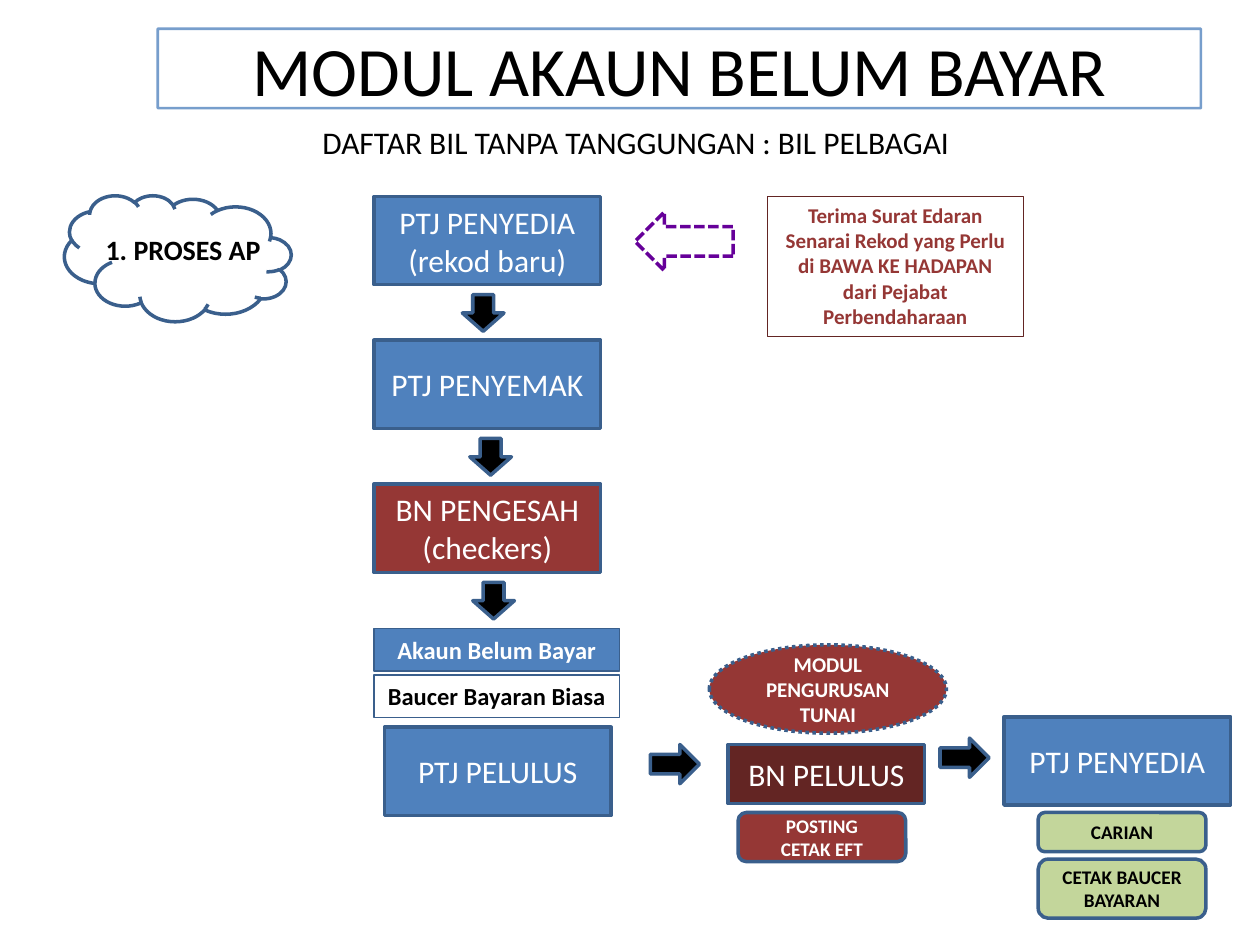
from lxml import etree
from pptx import Presentation
from pptx.dml.color import RGBColor
from pptx.enum import dml, shapes, text
from pptx.oxml import ns
from pptx.util import Cm, Pt

KIND = shapes.MSO_SHAPE
FONT = "Calibri"
BLUE, RED, DARK_RED, GREEN = "4F81BD", "953735", "632523", "C3D69B"
OUTLINE, PURPLE, BLACK, WHITE = "3A5F8C", "660099", "000000", "FFFFFF"
STEP = (4.57, 1.78)  # width and height of a process step
ARROW = (0.99, 0.79)


def color(value):
    return RGBColor.from_string(value)


def write(shape, words, size, ink, bold=False, align=text.PP_ALIGN.CENTER,
          anchor=text.MSO_ANCHOR.MIDDLE, wrap=True):
    frame = shape.text_frame
    frame.text = words
    frame.word_wrap = wrap
    frame.auto_size = text.MSO_AUTO_SIZE.NONE
    frame.vertical_anchor = anchor
    for para in frame.paragraphs:
        para.alignment = align
        para.font.name = FONT
        para.font.size = Pt(size)
        para.font.bold = bold
        para.font.color.rgb = color(ink)


def draw(page, kind, left, top, size, fill=None, line=OUTLINE, weight=2, dash=None):
    shape = page.shapes.add_shape(kind, Cm(left), Cm(top), *map(Cm, size))
    shape.shadow.inherit = False
    if fill:
        shape.fill.solid()
        shape.fill.fore_color.rgb = color(fill)
    else:
        shape.fill.background()
    shape.line.color.rgb = color(line)
    shape.line.width = Pt(weight)
    if dash:
        shape.line.dash_style = dash
    return shape


def step(page, left, top, words, fill=BLUE, size=STEP):
    write(draw(page, KIND.RECTANGLE, left, top, size, fill), words, 18, WHITE)


def tag(page, left, top, height, words, fill, ink):
    shape = draw(page, KIND.ROUNDED_RECTANGLE, left, top, (3.38, height), fill)
    write(shape, words, 11, ink, bold=True)


def plain_text(page, left, top, size, words, points, **style):
    box = page.shapes.add_textbox(Cm(left), Cm(top), *map(Cm, size))
    write(box, words, points, BLACK, align=text.PP_ALIGN.LEFT,
          anchor=text.MSO_ANCHOR.TOP, **style)


def header(page, left, top):
    title = page.shapes.title
    title.left, title.top, title.width, title.height = map(Cm, (left, top, 21.03, 1.6))
    write(title, "MODUL AKAUN BELUM BAYAR", 39.6, BLACK)
    title.line.color.rgb = color(BLUE)
    title.line.width = Pt(1.5)
    # Slightly transparent border
    tint = title.line.fill.fore_color._xFill.find(ns.qn("a:srgbClr"))
    etree.SubElement(tint, ns.qn("a:alpha"), val="76000")
    plain_text(page, left + 3.07, top + 1.78, (13.69, 1.02),
               "DAFTAR BIL TANPA TANGGUNGAN : BIL PELBAGAI", 18)


def process_cloud(page, left, top):
    cloud = draw(page, KIND.CLOUD, left, top, (4.57, 2.54))
    cloud._element.spPr.xfrm.set("flipH", "1")
    plain_text(page, left + 0.58, top + 0.63, (3.68, 0.94), "1. PROSES AP", 16,
               bold=True, wrap=False)


def preparation_column(page, left, top):
    pitch = 2.9
    steps = [("PTJ PENYEDIA\n(rekod baru)", BLUE, 1.83),
             ("PTJ PENYEMAK", BLUE, 1.98),
             ("BN PENGESAH\n(checkers)", RED, 2.04)]
    for row, (words, fill, arrow_left) in enumerate(steps):
        y = top + row * pitch
        step(page, left, y, words, fill)
        arrow = draw(page, KIND.RIGHT_ARROW, left + arrow_left, y + 1.93,
                     (0.74, 0.84), BLACK)
        arrow.rotation = 90


def circular_note(page, left, top):
    arrow = draw(page, KIND.RIGHT_ARROW, left, top + 0.31, (1.98, 1.19),
                 line=PURPLE, dash=dml.MSO_LINE.SQUARE_DOT)
    arrow.rotation = 180
    # SQUARE_DOT is written as sysDot; short dashes need sysDash
    arrow.line._ln.find(ns.qn("a:prstDash")).set("val", "sysDash")
    note = draw(page, KIND.RECTANGLE, left + 2.67, top, (5.16, 2.82),
                line=DARK_RED, weight=0.75)
    write(note, "Terima Surat Edaran Senarai Rekod yang Perlu di BAWA KE HADAPAN "
          "dari Pejabat Perbendaharaan", 12, RED, bold=True,
          anchor=text.MSO_ANCHOR.TOP)


def approval(page, left, top):
    labels = [("Akaun Belum Bayar", BLUE, WHITE), ("Baucer Bayaran Biasa", None, BLACK)]
    for row, (words, fill, ink) in enumerate(labels):
        label = draw(page, KIND.RECTANGLE, left, top + row * 0.94, (4.95, 0.86),
                     fill, weight=0.75)
        write(label, words, 14, ink, bold=True, anchor=text.MSO_ANCHOR.TOP)
    step(page, left + 0.21, top + 1.99, "PTJ PELULUS")
    draw(page, KIND.RIGHT_ARROW, left + 5.57, top + 2.34, ARROW, BLACK)


def cash_module(page, left, top):
    module = draw(page, KIND.OVAL, left, top, (4.78, 1.78), RED,
                  dash=dml.MSO_LINE.ROUND_DOT)
    module.line._ln.find(ns.qn("a:prstDash")).set("val", "sysDot")
    write(module, "MODUL PENGURUSAN TUNAI", 12, WHITE, bold=True)
    step(page, left + 0.38, top + 2.01, "BN PELULUS", DARK_RED, (3.96, 1.19))
    tag(page, left + 0.58, top + 3.38, 0.99, "POSTING\nCETAK EFT", RED, WHITE)
    draw(page, KIND.RIGHT_ARROW, left + 4.65, top + 1.88, ARROW, BLACK)


def voucher_output(page, left, top):
    step(page, left, top, "PTJ PENYEDIA")
    tag(page, left + 0.69, top + 1.93, 0.79, "CARIAN", GREEN, BLACK)
    tag(page, left + 0.69, top + 2.87, 1.19, "CETAK BAUCER BAYARAN", GREEN, BLACK)


def main():
    deck = Presentation()
    deck.slide_width, deck.slide_height = Cm(25.4), Cm(19.05)
    page = deck.slides.add_slide(deck.slide_layouts[5])  # title only
    header(page, 3.18, 0.58)
    process_cloud(page, 1.3, 3.94)
    preparation_column(page, 7.54, 3.96)
    circular_note(page, 12.8, 3.96)
    approval(page, 7.54, 12.67)
    cash_module(page, 14.3, 13)
    voucher_output(page, 20.24, 14.45)
    deck.save("out.pptx")


if __name__ == "__main__":
    main()
